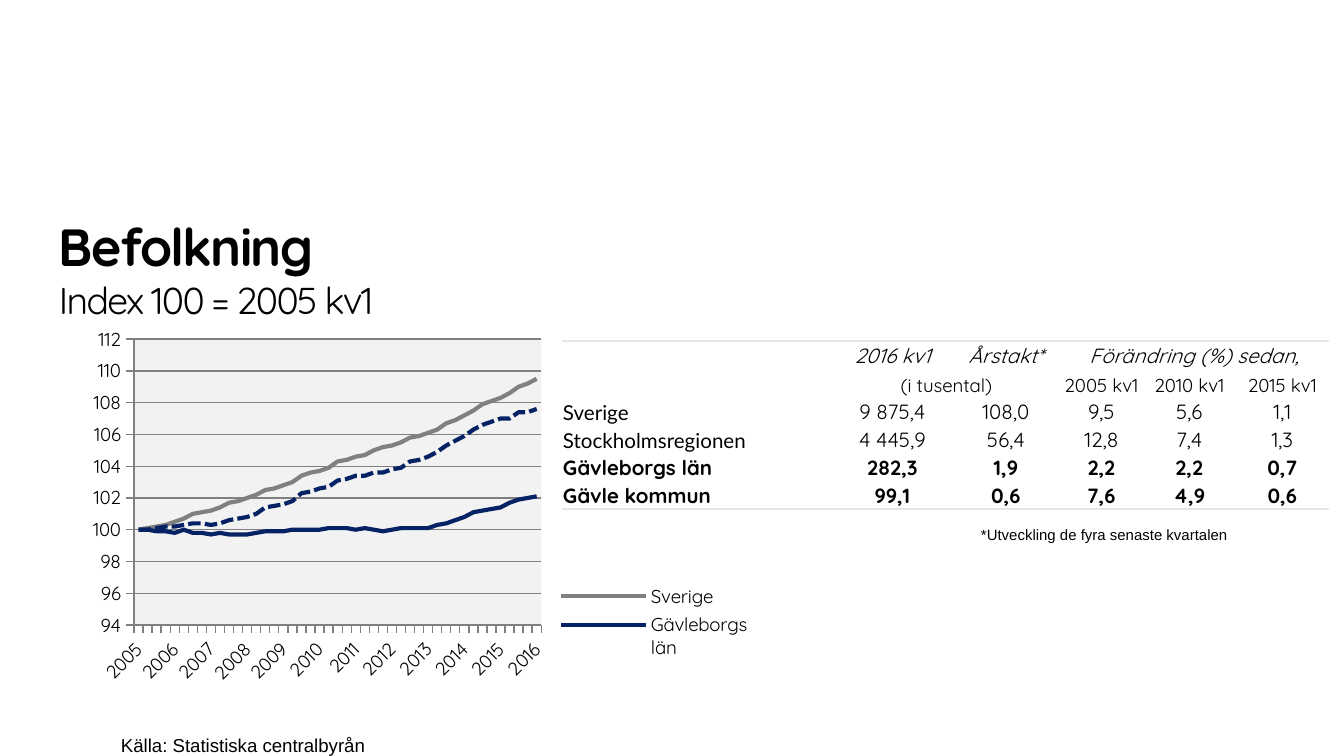
"""Build the population slide: index chart, key figures table and source notes."""
from lxml.etree import SubElement
from pptx import Presentation
from pptx.chart.data import CategoryChartData
from pptx.dml.color import RGBColor
from pptx.enum.chart import XL_CHART_TYPE as ChartType, XL_LEGEND_POSITION as LegendPosition
from pptx.enum.chart import XL_MARKER_STYLE as MarkerStyle, XL_TICK_MARK as TickMark
from pptx.enum.dml import MSO_LINE_DASH_STYLE as Dash
from pptx.enum.text import MSO_ANCHOR as Anchor, PP_ALIGN as Align
from pptx.oxml import parse_xml
from pptx.oxml.ns import nsdecls, qn
from pptx.util import Emu, Pt

COLORS = {"text": "000000", "rule": "E6E6E6", "plot": "F2F2F2",
          "grey": "808080", "navy": "052364"}
HEADING = [("Befolkning", 28, True), ("Index 100 = 2005 kv1", 20, False)]
HEADING_BOX = (59, 214, 835, 107)
NOTES = [("Källa: Statistiska centralbyrån", 10, (121, 712, 280, 44)),
         ("*Utveckling de fyra senaste kvartalen", 8, (981, 499, 280, 45))]

TABLE_ROWS = [
    ["", "2016 kv1", "Årstakt*", "Förändring (%) sedan,", "", ""],
    ["", "(i tusental)", "", "2005 kv1", "2010 kv1", "2015 kv1"],
    ["Sverige", "9 875,4", "108,0", "9,5", "5,6", "1,1"],
    ["Stockholmsregionen", "4 445,9", "56,4", "12,8", "7,4", "1,3"],
    ["Gävleborgs län", "282,3", "1,9", "2,2", "2,2", "0,7"],
    ["Gävle kommun", "99,1", "0,6", "7,6", "4,9", "0,6"],
]
TABLE_LEFT, TABLE_TOP, ROW_HEIGHT = 562, 341, 28
COLUMN_WIDTHS = [271, 119, 108, 83, 93, 93]
MERGES = [((0, 3), (0, 5)), ((1, 1), (1, 2))]
ROW_SIZES = [11, 10, 11, 11, 11, 11]
BOLD_ROWS = (4, 5)
LATO_ROWS = (2, 3)

YEARS = range(2005, 2017)
INDEX_SERIES = [
    ("Sverige", "grey", Dash.SOLID, [
        100, 100.1, 100.2, 100.3, 100.5, 100.7, 101, 101.1, 101.2, 101.4, 101.7, 101.8,
        102, 102.2, 102.5, 102.6, 102.8, 103, 103.4, 103.6, 103.7, 103.9, 104.3, 104.4,
        104.6, 104.7, 105, 105.2, 105.3, 105.5, 105.8, 105.9, 106.1, 106.3, 106.7, 106.9,
        107.2, 107.5, 107.9, 108.1, 108.3, 108.6, 109, 109.2, 109.5]),
    ("Gävleborgs län", "navy", Dash.SOLID, [
        100, 100, 99.9, 99.9, 99.8, 100, 99.8, 99.8, 99.7, 99.8, 99.7, 99.7,
        99.7, 99.8, 99.9, 99.9, 99.9, 100, 100, 100, 100, 100.1, 100.1, 100.1,
        100, 100.1, 100, 99.9, 100, 100.1, 100.1, 100.1, 100.1, 100.3, 100.4, 100.6,
        100.8, 101.1, 101.2, 101.3, 101.4, 101.7, 101.9, 102, 102.1]),
    ("Gävle kommun", "navy", Dash.SQUARE_DOT, [
        100, 100, 100.1, 100.2, 100.2, 100.3, 100.4, 100.4, 100.3, 100.4, 100.6, 100.7,
        100.8, 101, 101.4, 101.5, 101.6, 101.8, 102.3, 102.4, 102.6, 102.7, 103.1, 103.2,
        103.4, 103.4, 103.6, 103.6, 103.8, 103.9, 104.3, 104.4, 104.6, 104.9, 105.3, 105.6,
        105.9, 106.3, 106.6, 106.8, 107, 107, 107.4, 107.4, 107.6]),
]
CHART_BOX = (79, 321, 688, 371)
PLOT_BOX = (134, 339, 407, 286)
LEGEND_BOX = (550, 579, 208, 86)
NO_STYLE = "{2D5ABB26-0587-4C30-8999-92F81FD0307C}"


def px(length):
    return Emu(round(length * 914400 / 134.4))


def color(name):
    return RGBColor.from_string(COLORS[name])


def set_font(font, size, name, bold=False, italic=False):
    font.size, font.name, font.bold, font.italic = Pt(size), name, bold, italic
    font.color.rgb = color("text")


def add_text_frame(slide, box):
    frame = slide.shapes.add_textbox(*map(px, box)).text_frame
    frame.word_wrap = True
    frame.margin_left = frame.margin_top = frame.margin_right = frame.margin_bottom = 0
    return frame


def add_heading(slide):
    paragraph = add_text_frame(slide, HEADING_BOX).paragraphs[0]
    for position, (text, size, bold) in enumerate(HEADING):
        if position:
            paragraph.add_line_break()
        run = paragraph.add_run()
        run.text = text
        set_font(run.font, size, "Quicksand", bold)
        run.font._element.set("spc", "-90")


def add_note(slide, text, size, box):
    paragraph = add_text_frame(slide, box).paragraphs[0]
    paragraph.text = text
    paragraph.line_spacing = Pt(24)
    set_font(paragraph.font, size, "Arial")


def add_rule(cell, side):
    properties = cell._tc.get_or_add_tcPr()
    properties.insert(0, parse_xml(
        f'<a:{side} {nsdecls("a")} w="12700"><a:solidFill>'
        f'<a:srgbClr val="{COLORS["rule"]}"/></a:solidFill></a:{side}>'))


def add_figures(slide):
    frame = slide.shapes.add_table(
        len(TABLE_ROWS), len(COLUMN_WIDTHS), px(TABLE_LEFT), px(TABLE_TOP),
        px(sum(COLUMN_WIDTHS)), px(ROW_HEIGHT * len(TABLE_ROWS)))
    table = frame.table
    table.first_row = table.horz_banding = False
    table._tbl.tblPr.find(qn("a:tableStyleId")).text = NO_STYLE
    for column, width in zip(table.columns, COLUMN_WIDTHS):
        column.width = px(width)
    for r, texts in enumerate(TABLE_ROWS):
        table.rows[r].height = px(ROW_HEIGHT)
        for c, text in enumerate(texts):
            cell = table.cell(r, c)
            cell.fill.background()
            cell.vertical_anchor = Anchor.BOTTOM
            cell.margin_left = cell.margin_right = cell.margin_top = px(1)
            cell.margin_bottom = 0
            paragraph = cell.text_frame.paragraphs[0]
            paragraph.text = text
            paragraph.alignment = Align.CENTER if c else Align.LEFT
            family = "Lato" if c == 0 and r in LATO_ROWS else "Quicksand"
            set_font(paragraph.font, ROW_SIZES[r], family, r in BOLD_ROWS, r == 0)
            SubElement(paragraph._p, qn("a:endParaRPr"), sz=str(ROW_SIZES[r] * 100))
            if r == 0:
                add_rule(cell, "lnT")
            if r == len(TABLE_ROWS) - 1:
                add_rule(cell, "lnB")
    for first, last in MERGES:
        table.cell(*first).merge(table.cell(*last))


def layout(box, inner=False):
    left, top, width, height = CHART_BOX
    shares = {"x": (box[0] - left) / width, "y": (box[1] - top) / height,
              "w": box[2] / width, "h": box[3] / height}
    target = '<c:layoutTarget val="inner"/>' if inner else ""
    modes = '<c:xMode val="edge"/><c:yMode val="edge"/>'
    places = "".join(f'<c:{key} val="{share:.3f}"/>' for key, share in shares.items())
    return parse_xml(f'<c:layout {nsdecls("c")}><c:manualLayout>{target}{modes}{places}'
                     '</c:manualLayout></c:layout>')


def place(element, new_layout):
    for old in element.findall(qn("c:layout")):
        element.remove(old)
    element.insert(0, new_layout)


def add_index_chart(slide):
    data = CategoryChartData(number_format="#,##0")
    quarters = [str(year) if q == 0 else "" for year in YEARS for q in range(4)]
    data.categories = quarters[:len(INDEX_SERIES[0][3])]
    for name, _, _, values in INDEX_SERIES:
        data.add_series(name, values)
    chart = slide.shapes.add_chart(ChartType.LINE, *map(px, CHART_BOX), data).chart
    chart.has_title = False
    set_font(chart.font, 10, "Quicksand")
    chart.plots[0].vary_by_categories = False
    for series, (_, shade, dash, _) in zip(chart.plots[0].series, INDEX_SERIES):
        series.smooth = False
        series.marker.style = MarkerStyle.NONE
        series.format.line.width = Pt(2.25)
        series.format.line.color.rgb = color(shade)
        series.format.line.dash_style = dash

    values, years = chart.value_axis, chart.category_axis
    values.minimum_scale, values.maximum_scale, values.major_unit = 94, 112, 2
    values.tick_labels.number_format = "#,##0"
    values.tick_labels.number_format_is_linked = False
    for axis in (values, years):
        axis.major_tick_mark, axis.minor_tick_mark = TickMark.OUTSIDE, TickMark.NONE
        set_font(axis.tick_labels.font, 10, "Quicksand")
    for part in (values, years, values.major_gridlines):
        part.format.line.color.rgb = color("grey")
        part.format.line.width = Pt(0.75)
    years._element.find(qn("c:txPr")).find(qn("a:bodyPr")).set("rot", "-2700000")

    chart.has_legend = True
    legend = chart.legend
    legend.position, legend.include_in_layout = LegendPosition.RIGHT, False
    set_font(legend.font, 10, "Quicksand")
    place(legend._element, layout(LEGEND_BOX))
    legend._element.remove(legend._element.find(qn("c:legendPos")))
    legend._element.insert(0, parse_xml(f'<c:legendPos {nsdecls("c")} val="r"/>'))
    legend._element.insert(1, parse_xml(
        f'<c:legendEntry {nsdecls("c")}><c:idx val="2"/><c:delete val="1"/></c:legendEntry>'))
    plot_area = chart._chartSpace.chart.plotArea
    place(plot_area, layout(PLOT_BOX, True))
    plot_area.append(parse_xml(
        f'<c:spPr {nsdecls("c", "a")}><a:solidFill><a:srgbClr val="{COLORS["plot"]}"/>'
        '</a:solidFill></c:spPr>'))


def main():
    deck = Presentation()
    deck.slide_width, deck.slide_height = px(1344), px(756)
    slide = deck.slides.add_slide(deck.slide_layouts[6])
    add_heading(slide)
    add_figures(slide)
    for note in NOTES:
        add_note(slide, *note)
    add_index_chart(slide)
    deck.save("out.pptx")


if __name__ == "__main__":
    main()
